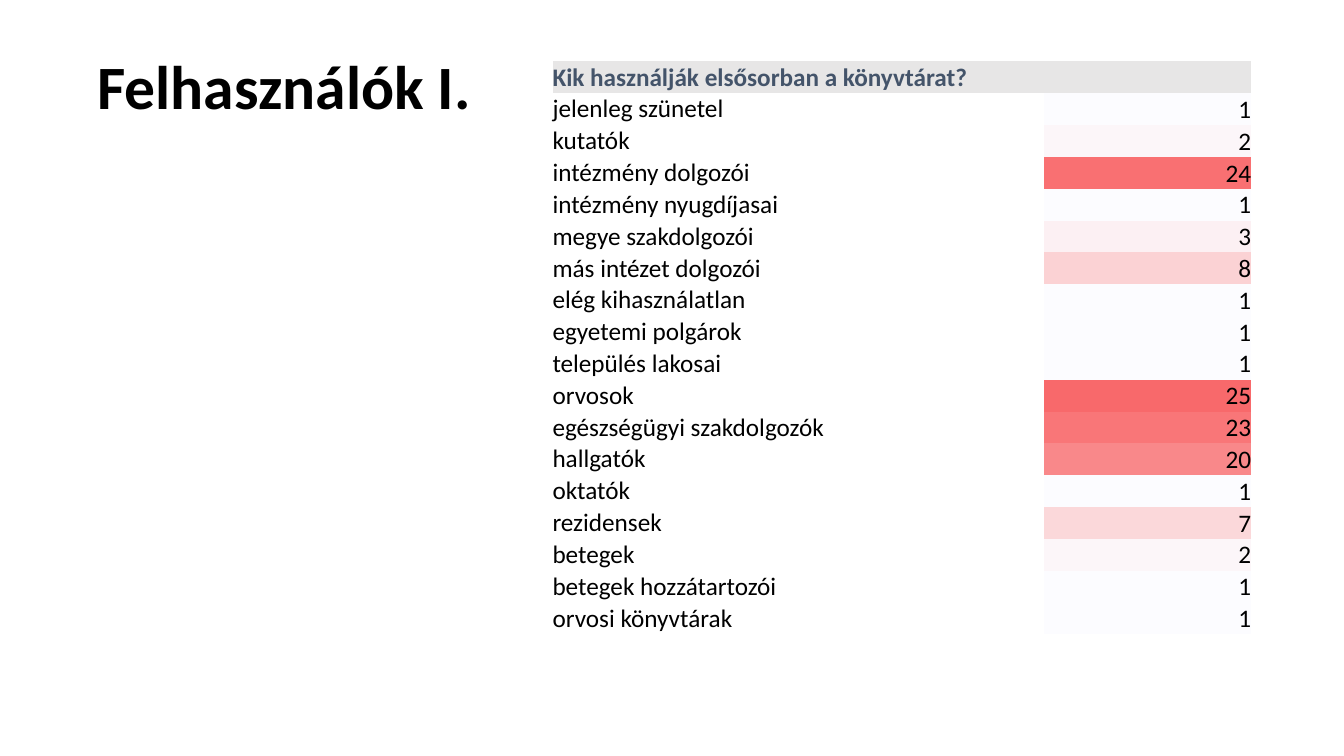
from pptx import Presentation
from pptx.dml.color import RGBColor
from pptx.enum.text import MSO_ANCHOR, PP_ALIGN
from pptx.util import Inches, Pt

# Content
TITLE = "Felhasználók I."
QUESTION = "Kik használják elsősorban a könyvtárat?"
USERS = [
    ("jelenleg szünetel", 1),
    ("kutatók", 2),
    ("intézmény dolgozói", 24),
    ("intézmény nyugdíjasai", 1),
    ("megye szakdolgozói", 3),
    ("más intézet dolgozói", 8),
    ("elég kihasználatlan", 1),
    ("egyetemi polgárok", 1),
    ("település lakosai", 1),
    ("orvosok", 25),
    ("egészségügyi szakdolgozók", 23),
    ("hallgatók", 20),
    ("oktatók", 1),
    ("rezidensek", 7),
    ("betegek", 2),
    ("betegek hozzátartozói", 1),
    ("orvosi könyvtárak", 1),
]

# Look
FONT = "Calibri"
COLORS = {
    "text": "000000",
    "header": "44546A",
    "header_fill": "E7E6E6",
    "low": "FCFCFF",
    "high": "F8696B",
}
NO_STYLE = "{2D5ABB26-0587-4C30-8999-92F81FD0307C}"

# Layout in inches
PAGE_SIZE = (13.33, 7.5)
TITLE_AREA = (0.16, 0.16, 5.32, 1.45)
TABLE_LEFT, TABLE_TOP, TABLE_HEIGHT = 5.48, 0.61, 5.69
COLUMN_WIDTHS = (4.87, 2.06)


def heat_color(value):
    """Colour between low and high, in proportion to the value."""
    counts = [count for _, count in USERS]
    least, most = min(counts), max(counts)
    channels = zip(RGBColor.from_string(COLORS["low"]),
                   RGBColor.from_string(COLORS["high"]))
    return RGBColor(*(low - (low - high) * (value - least) // (most - least)
                      for low, high in channels))


def write(frame, text, size, color, bold=False, align=PP_ALIGN.LEFT):
    para = frame.paragraphs[0]
    para.alignment = align
    span = para.add_run()
    span.text = text
    span.font.name = FONT
    span.font.size = Pt(size)
    span.font.bold = bold
    span.font.color.rgb = RGBColor.from_string(COLORS[color])
    return para


def fill_cell(cell, text, anchor, fill=None, color="text", **style):
    cell.margin_left = cell.margin_right = cell.margin_top = cell.margin_bottom = 0
    cell.vertical_anchor = anchor
    if fill is None:
        cell.fill.background()
    else:
        cell.fill.solid()
        cell.fill.fore_color.rgb = fill
    write(cell.text_frame, text, 18, color, **style)


def add_title(page):
    box = page.shapes.add_textbox(*map(Inches, TITLE_AREA))
    frame = box.text_frame
    frame.word_wrap = True
    frame.vertical_anchor = MSO_ANCHOR.MIDDLE
    para = write(frame, TITLE, 44, "text", bold=True, align=PP_ALIGN.CENTER)
    para.line_spacing = 0.9


def add_user_table(page):
    row_count = len(USERS) + 1
    table = page.shapes.add_table(
        row_count, len(COLUMN_WIDTHS), Inches(TABLE_LEFT), Inches(TABLE_TOP),
        Inches(sum(COLUMN_WIDTHS)), Inches(TABLE_HEIGHT)).table
    table.first_row = table.horz_banding = False
    table._tbl.tblPr.find("{*}tableStyleId").text = NO_STYLE
    for column, width in zip(table.columns, COLUMN_WIDTHS):
        column.width = Inches(width)
    for row in table.rows:
        row.height = Inches(TABLE_HEIGHT / row_count)

    # Header across both columns
    header = table.cell(0, 0)
    header.merge(table.cell(0, 1))
    fill_cell(header, QUESTION, MSO_ANCHOR.BOTTOM,
              RGBColor.from_string(COLORS["header_fill"]), "header", bold=True)

    # User groups with shaded counts
    for index, (group, count) in enumerate(USERS, start=1):
        fill_cell(table.cell(index, 0), group, MSO_ANCHOR.MIDDLE)
        fill_cell(table.cell(index, 1), str(count), MSO_ANCHOR.BOTTOM,
                  heat_color(count), align=PP_ALIGN.RIGHT)


def main():
    deck = Presentation()
    deck.slide_width, deck.slide_height = map(Inches, PAGE_SIZE)
    page = deck.slides.add_slide(deck.slide_layouts[6])
    add_title(page)
    add_user_table(page)
    deck.save("out.pptx")


if __name__ == "__main__":
    main()
